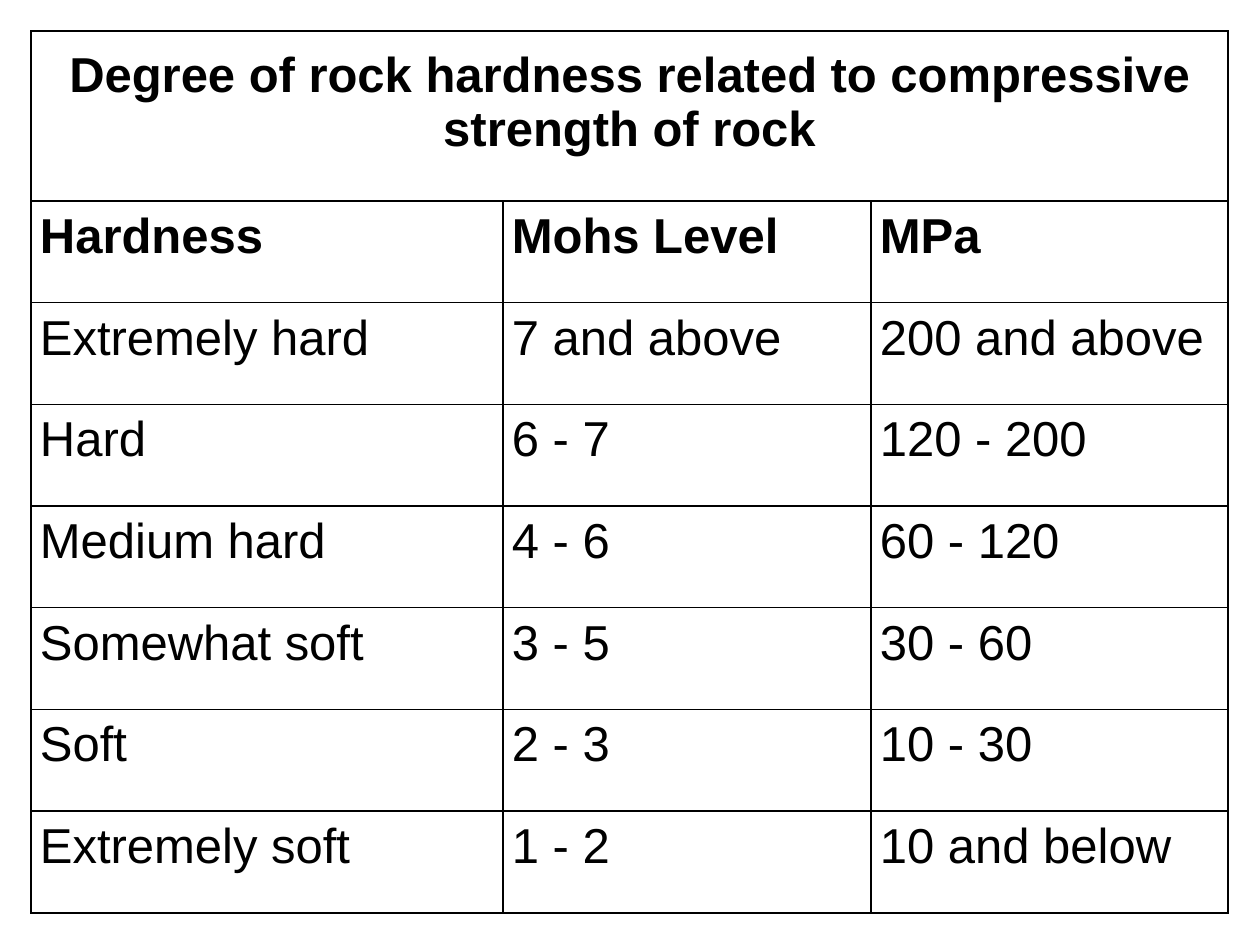
from pptx import Presentation
from pptx.dml.color import RGBColor
from pptx.enum.text import PP_ALIGN
from pptx.oxml import parse_xml
from pptx.oxml.ns import nsdecls
from pptx.util import Emu, Inches, Pt

BLACK = RGBColor(0, 0, 0)
WHITE = RGBColor(255, 255, 255)
PX_PER_INCH = 126
FONT = "Arial"

TITLE = "Degree of rock hardness related to compressive strength of rock"
HEADINGS = ("Hardness", "Mohs Level", "MPa")
HARDNESS_LEVELS = (
    ("Extremely hard", "7 and above", "200 and above"),
    ("Hard", "6 - 7", "120 - 200"),
    ("Medium hard", "4 - 6", "60 - 120"),
    ("Somewhat soft", "3 - 5", "30 - 60"),
    ("Soft", "2 - 3", "10 - 30"),
    ("Extremely soft", "1 - 2", "10 and below"),
)

LEFT, TOP = 31, 31
COLUMN_WIDTHS = (472, 368, 357)
TITLE_HEIGHT = 170
BODY_HEIGHT = 712
SIDE_MARGIN = 9
TITLE_MARGIN = 17


def px(length):
    return Emu(round(length * Inches(1) / PX_PER_INCH))


def set_borders(cell):
    properties = cell._tc.get_or_add_tcPr()
    for position, side in enumerate(("lnL", "lnR", "lnT", "lnB")):
        border = parse_xml(
            f'<a:{side} {nsdecls("a")} w="{Pt(1)}"><a:solidFill>'
            f'<a:srgbClr val="{BLACK}"/></a:solidFill></a:{side}>'
        )
        properties.insert(position, border)


def style_cell(cell):
    cell.fill.solid()
    cell.fill.fore_color.rgb = WHITE
    cell.margin_left = cell.margin_right = px(SIDE_MARGIN)
    cell.margin_top = cell.margin_bottom = 0
    set_borders(cell)


def write_cell(cell, text, bold=False, line_spacing=1.15):
    cell.text_frame.text = text
    paragraph = cell.text_frame.paragraphs[0]
    paragraph.line_spacing = line_spacing
    font = paragraph.runs[0].font
    font.name, font.size, font.bold = FONT, Pt(28), bold
    font.color.rgb = BLACK


def add_hardness_table(slide):
    rows = (HEADINGS, *HARDNESS_LEVELS)
    frame = slide.shapes.add_table(
        len(rows) + 1, len(HEADINGS), px(LEFT), px(TOP),
        px(sum(COLUMN_WIDTHS)), px(TITLE_HEIGHT + BODY_HEIGHT),
    )
    table = frame.table
    table.first_row = table.horz_banding = False

    # Grid
    for column, width in zip(table.columns, COLUMN_WIDTHS):
        column.width = px(width)
    for row in table.rows:
        row.height = px(BODY_HEIGHT / len(rows))
    table.rows[0].height = px(TITLE_HEIGHT)
    for cell in table.iter_cells():
        style_cell(cell)

    # Title across all columns
    title = table.cell(0, 0)
    title.merge(table.cell(0, len(HEADINGS) - 1))
    write_cell(title, TITLE, bold=True, line_spacing=1.0)
    title.margin_top = px(TITLE_MARGIN)
    title.text_frame.paragraphs[0].alignment = PP_ALIGN.CENTER

    # Headings and levels
    for row_index, texts in enumerate(rows, start=1):
        for column_index, text in enumerate(texts):
            write_cell(table.cell(row_index, column_index), text, bold=row_index == 1)


def main():
    presentation = Presentation()
    presentation.slide_width, presentation.slide_height = Inches(10), Inches(7.5)
    slide = presentation.slides.add_slide(presentation.slide_layouts[6])
    add_hardness_table(slide)
    presentation.save("out.pptx")


if __name__ == "__main__":
    main()
